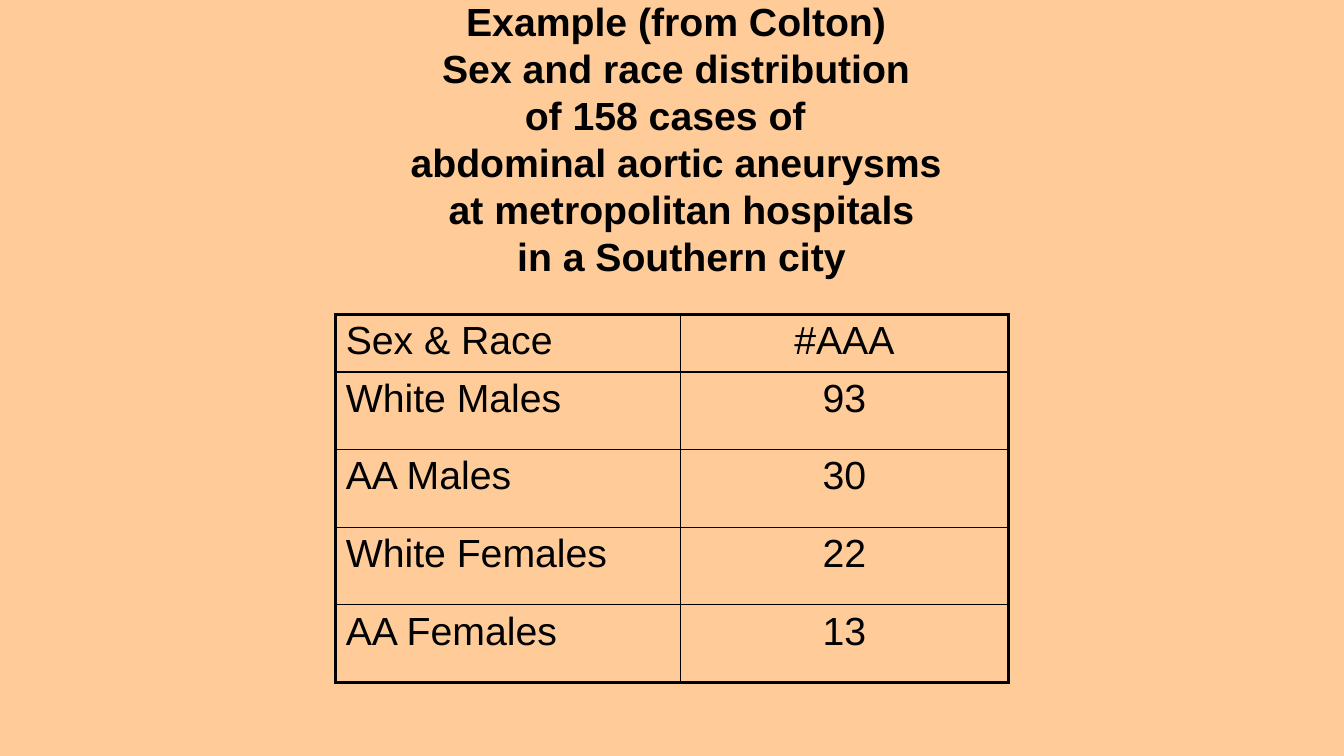
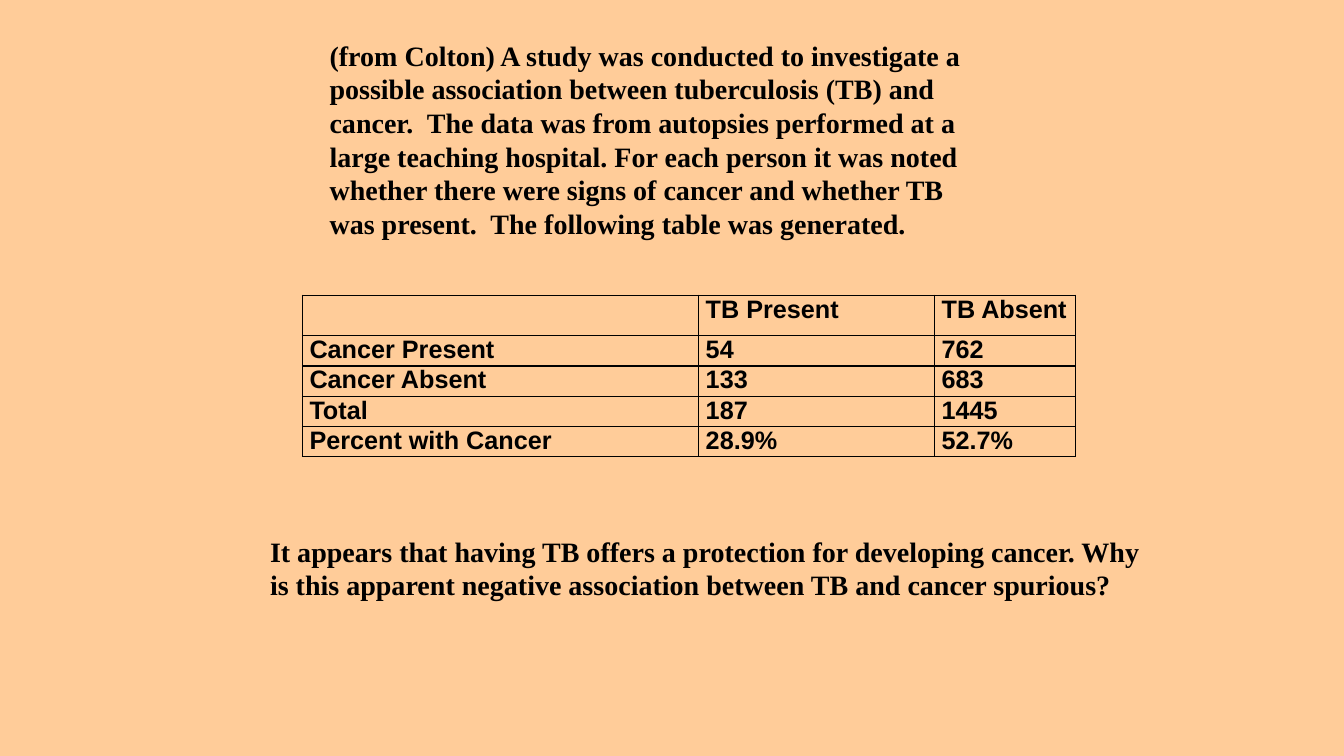
from dataclasses import dataclass

import lxml.etree
import pptx
import pptx.dml.color
import pptx.enum.text
import pptx.oxml.ns
import pptx.presentation
import pptx.slide
import pptx.table
import pptx.text.text
import pptx.util

Inches = pptx.util.Inches
LEFT = pptx.enum.text.PP_ALIGN.LEFT
CENTER = pptx.enum.text.PP_ALIGN.CENTER


@dataclass(frozen=True)
class TextStyle:
    name: str
    size: int
    bold: bool


@dataclass(frozen=True)
class Theme:
    background: str = "FFCC99"
    ink: str = "000000"
    title: TextStyle = TextStyle("Arial", 28, True)
    body: TextStyle = TextStyle("Times New Roman", 20, True)
    large_cell: TextStyle = TextStyle("Arial", 28, False)
    small_cell: TextStyle = TextStyle("Arial", 18, True)
    thin: float = 1
    thick: float = 2.25


THEME = Theme()


@dataclass(frozen=True)
class TextBlock:
    left: float
    top: float
    width: float
    height: float
    lines: tuple[str, ...]
    style: TextStyle
    align: pptx.enum.text.PP_ALIGN = LEFT


@dataclass(frozen=True)
class DataTable:
    left: float
    top: float
    columns: tuple[float, ...]
    header_height: float
    row_height: float
    inset_x: float
    inset_y: float
    frame: float
    style: TextStyle
    aligns: tuple[pptx.enum.text.PP_ALIGN, ...]
    rows: tuple[tuple[str, ...], ...]


def set_all(target: object, values: dict[str, object]) -> None:
    for name, value in values.items():
        setattr(target, name, value)


def write_line(para: pptx.text.text._Paragraph, text: str, style: TextStyle,
               align: pptx.enum.text.PP_ALIGN) -> None:
    para.alignment = align
    if not text:
        return
    span = para.add_run()
    span.text = text
    set_all(span.font, {"name": style.name, "size": pptx.util.Pt(style.size),
                        "bold": style.bold})
    span.font.color.rgb = pptx.dml.color.RGBColor.from_string(THEME.ink)


def add_text(page: pptx.slide.Slide, block: TextBlock) -> None:
    box = page.shapes.add_textbox(Inches(block.left), Inches(block.top),
                                  Inches(block.width), Inches(block.height))
    frame = box.text_frame
    set_all(frame, {"word_wrap": True,
                    "auto_size": pptx.enum.text.MSO_AUTO_SIZE.SHAPE_TO_FIT_TEXT})
    for index, line in enumerate(block.lines):
        para = frame.add_paragraph() if index else frame.paragraphs[0]
        write_line(para, line, block.style, block.align)


def set_borders(cell: pptx.table._Cell, weights: dict[str, float]) -> None:
    qn = pptx.oxml.ns.qn
    properties = cell._tc.get_or_add_tcPr()
    for side, weight in weights.items():
        line = lxml.etree.SubElement(properties, qn(f"a:ln{side}"),
                                     w=str(int(pptx.util.Pt(weight))))
        fill = lxml.etree.SubElement(line, qn("a:solidFill"))
        lxml.etree.SubElement(fill, qn("a:srgbClr"), val=THEME.ink)


def add_data_table(page: pptx.slide.Slide, data: DataTable) -> None:
    last_row, last_column = len(data.rows) - 1, len(data.columns) - 1
    height = data.header_height + last_row * data.row_height
    table = page.shapes.add_table(
        len(data.rows), len(data.columns), Inches(data.left), Inches(data.top),
        Inches(sum(data.columns)), Inches(height)).table
    set_all(table, {"first_row": False, "horz_banding": False})
    for column, width in zip(table.columns, data.columns):
        column.width = Inches(width)

    margins = {"margin_left": Inches(data.inset_x), "margin_right": Inches(data.inset_x),
               "margin_top": Inches(data.inset_y), "margin_bottom": Inches(data.inset_y)}
    for r, values in enumerate(data.rows):
        table.rows[r].height = Inches(data.row_height if r else data.header_height)
        for c, value in enumerate(values):
            cell = table.cell(r, c)
            set_all(cell, margins)
            # The outer frame may be heavier than the inner grid
            on_frame = {"L": c == 0, "R": c == last_column,
                        "T": r == 0, "B": r == last_row}
            set_borders(cell, {side: data.frame if outer else THEME.thin
                               for side, outer in on_frame.items()})
            cell.fill.background()
            write_line(cell.text_frame.paragraphs[0], value, data.style, data.aligns[c])


def add_page(deck: pptx.presentation.Presentation) -> pptx.slide.Slide:
    return deck.slides.add_slide(deck.slide_layouts[6])


# Slide 1: aneurysm cases by sex and race
ANEURYSM_TITLE = TextBlock(
    3.5, -0.08, 6.41, 2.9,
    ("Example (from Colton)",
     " Sex and race distribution ",
     "of 158 cases of  ",
     "abdominal aortic aneurysms",
     " at metropolitan hospitals",
     " in a Southern city"),
    THEME.title, CENTER)

ANEURYSM_TABLE = DataTable(
    left=3.33, top=3.12, columns=(3.42, 3.25), header_height=0.57, row_height=0.77,
    inset_x=0.1, inset_y=0.05, frame=THEME.thick, style=THEME.large_cell,
    aligns=(LEFT, CENTER),
    rows=(("Sex & Race", "#AAA"),
          ("White Males", "93"),
          ("AA Males", "30"),
          ("White Females", "22"),
          ("AA Females", "13")))

# Slide 2: tuberculosis and cancer
STUDY_TEXT = TextBlock(
    3.17, 0.33, 6.75, 2.42,
    ("(from Colton) A study was conducted to investigate a possible association "
     "between tuberculosis (TB) and cancer.  The data was from autopsies performed "
     "at a large teaching hospital. For each person it was noted whether there were "
     "signs of cancer and whether TB was present.  The following table was generated.",),
    THEME.body)

STUDY_TABLE = DataTable(
    left=3, top=2.93, columns=(3.93, 2.34, 1.4), header_height=0.4, row_height=0.3,
    inset_x=0.07, inset_y=0, frame=THEME.thin, style=THEME.small_cell,
    aligns=(LEFT, LEFT, LEFT),
    rows=(("", "TB Present", "TB Absent"),
          ("Cancer Present", "54", "762"),
          ("Cancer Absent", "133", "683"),
          ("Total", "187", "1445"),
          ("Percent with Cancer", "28.9%", "52.7%")))

STUDY_QUESTION = TextBlock(
    2.58, 5.25, 8.83, 1.11,
    ("It appears that having TB offers a protection for developing cancer. Why is "
     "this apparent negative association between TB and cancer spurious?",),
    THEME.body)


def main() -> None:
    deck = pptx.Presentation()
    set_all(deck, {"slide_width": Inches(13.33), "slide_height": Inches(7.5)})

    # Shared background
    fill = deck.slide_master.background.fill
    fill.solid()
    fill.fore_color.rgb = pptx.dml.color.RGBColor.from_string(THEME.background)

    aneurysm_page = add_page(deck)
    add_text(aneurysm_page, ANEURYSM_TITLE)
    add_data_table(aneurysm_page, ANEURYSM_TABLE)

    study_page = add_page(deck)
    add_data_table(study_page, STUDY_TABLE)
    for block in (STUDY_TEXT, STUDY_QUESTION):
        add_text(study_page, block)

    deck.save("out.pptx")


if __name__ == "__main__":
    main()
